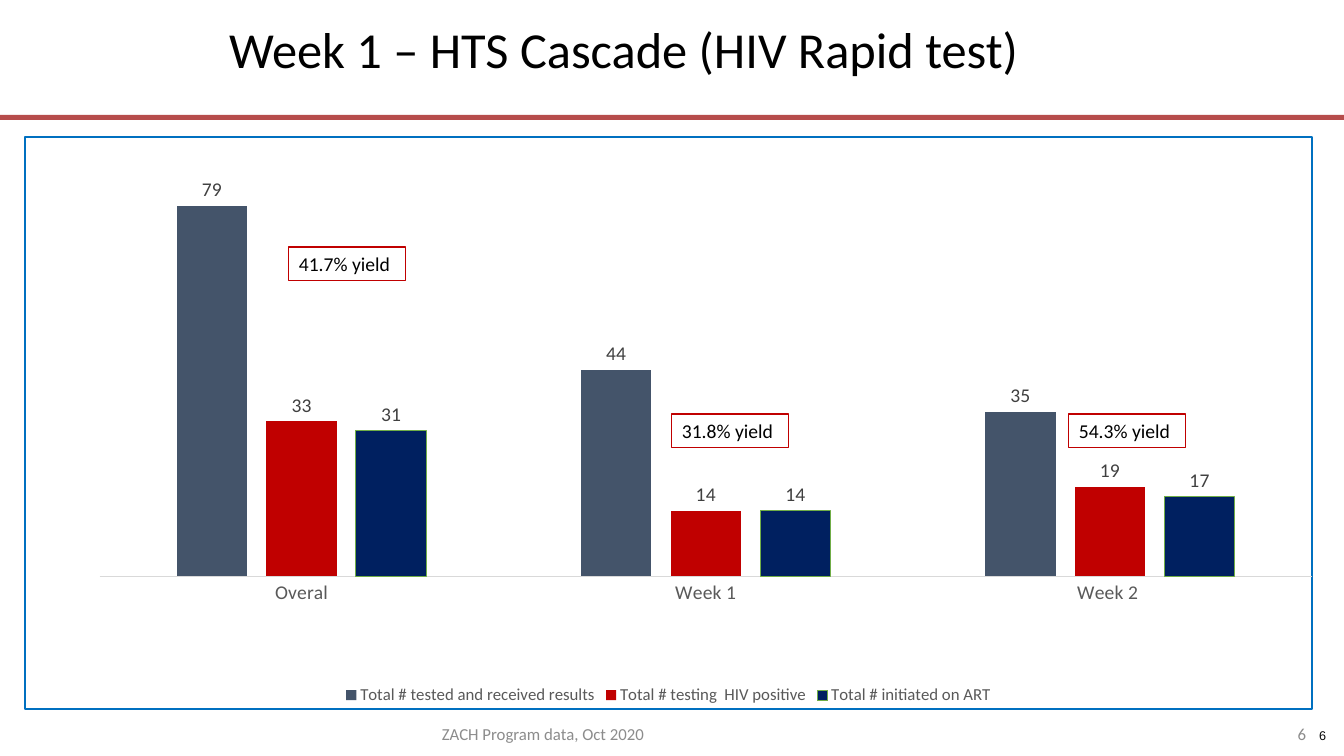
from lxml import etree
from pptx import Presentation
from pptx.chart.data import CategoryChartData
from pptx.dml.color import RGBColor
from pptx.enum.chart import XL_CHART_TYPE, XL_LABEL_POSITION, XL_LEGEND_POSITION, XL_TICK_MARK
from pptx.enum.shapes import MSO_SHAPE
from pptx.enum.text import MSO_ANCHOR, PP_ALIGN
from pptx.oxml import parse_xml
from pptx.oxml.ns import nsdecls, qn
from pptx.util import Pt

COLUMNS = XL_CHART_TYPE.COLUMN_CLUSTERED
OUTSIDE = XL_LABEL_POSITION.OUTSIDE_END
BOTTOM = XL_LEGEND_POSITION.BOTTOM
NO_TICK = XL_TICK_MARK.NONE
RECT = MSO_SHAPE.RECTANGLE
TOP, MIDDLE = MSO_ANCHOR.TOP, MSO_ANCHOR.MIDDLE
LEFT, RIGHT = PP_ALIGN.LEFT, PP_ALIGN.RIGHT

BLACK = RGBColor(0x00, 0x00, 0x00)
INK = RGBColor(0x06, 0x06, 0x06)
GRAY = RGBColor(0x8C, 0x8C, 0x8C)
LABEL = RGBColor(0x40, 0x40, 0x40)
AXIS = RGBColor(0x59, 0x59, 0x59)
RULE = RGBColor(0xD9, 0xD9, 0xD9)
BRICK = RGBColor(0xB6, 0x4C, 0x4B)
SLATE = RGBColor(0x44, 0x54, 0x6A)
RED = RGBColor(0xC0, 0x00, 0x00)
NAVY = RGBColor(0x00, 0x20, 0x60)
GREEN = RGBColor(0x70, 0xAD, 0x47)
BLUE = RGBColor(0x00, 0x70, 0xC0)

WEEKS = ["Overal", "Week 1", "Week 2 "]
SERIES = [
    ("Total # tested and received results", [79, 44, 35], SLATE, None),
    ("Total # testing  HIV positive", [33, 14, 19], RED, None),
    ("Total # initiated on ART", [31, 14, 17], NAVY, GREEN),
]
YIELDS = [(289, 247, "41.7% yield"), (672, 414, "31.8% yield"), (1069, 414, "54.3% yield")]
PLOT = {"x": 0.058, "y": 0.03, "w": 0.942, "h": 0.738}


def px(*lengths):
    return [round(n * 914400 / 100.8) for n in lengths]


def style(font, size, color, name="Calibri"):
    font.name, font.size, font.color.rgb = name, Pt(size), color


class Page:
    """The current slide and its house style."""

    def __init__(self, deck):
        self.slide = deck.slides.add_slide(deck.slide_layouts[5])
        self.shapes = self.slide.shapes

    def label(self, shape, text, size, color, name="Calibri", align=LEFT, anchor=MIDDLE):
        frame = shape.text_frame
        frame.word_wrap = True
        frame.vertical_anchor = anchor
        frame.text = text
        para = frame.paragraphs[0]
        para.alignment = align
        style(para.font, size, color, name)
        return para

    def title(self, box, text):
        shape = self.shapes.title
        shape.left, shape.top, shape.width, shape.height = px(*box)
        self.label(shape, text, 36, BLACK, anchor=TOP).line_spacing = 0.9

    def text(self, box, text, size, color, **look):
        self.label(self.shapes.add_textbox(*px(*box)), text, size, color, **look)

    def rect(self, box, fill=None, line=None):
        shape = self.shapes.add_shape(RECT, *px(*box))
        shape.shadow.inherit = False
        if fill:
            shape.fill.solid()
            shape.fill.fore_color.rgb = fill
        else:
            shape.fill.background()
        if line:
            shape.line.color.rgb = line
            shape.line.width = Pt(0.75)
        else:
            shape.line.fill.background()
        return shape

    def tag(self, left, top, text):
        shape = self.rect((left, top, 117, 34), line=RED)
        self.label(shape, text, 14, BLACK, anchor=TOP)

    def chart(self, box):
        data = CategoryChartData()
        data.categories = WEEKS
        for name, values, *_ in SERIES:
            data.add_series(name, values)
        chart = self.shapes.add_chart(COLUMNS, *px(*box), data).chart
        style(chart.font, 14, BLACK)
        chart.has_title = False
        chart.has_legend = True
        chart.legend.position = BOTTOM
        chart.legend.include_in_layout = False
        style(chart.legend.font, 12, AXIS)

        axis = chart.category_axis
        axis.major_tick_mark = axis.minor_tick_mark = NO_TICK
        axis.format.line.color.rgb = RULE
        axis.format.line.width = Pt(0.75)
        style(axis.tick_labels.font, 14, AXIS)
        scale = chart.value_axis
        scale.minimum_scale, scale.maximum_scale = 0, 90
        scale.has_major_gridlines = False
        scale.visible = False

        plot = chart.plots[0]
        plot.gap_width, plot.overlap = 219, -27
        plot.vary_by_categories = False
        for bars, (_, _, fill, line) in zip(plot.series, SERIES):
            bars.format.fill.solid()
            bars.format.fill.fore_color.rgb = fill
            if line:
                bars.format.line.color.rgb = line
                bars.format.line.width = Pt(0.75)
            else:
                bars.format.line.fill.background()
            labels = bars.data_labels
            labels.show_value = True
            labels.position = OUTSIDE
            style(labels.font, 14, LABEL)
        self.frame(chart)

    def frame(self, chart):
        """Fix the inner plot area and outline the whole chart."""
        root = chart.element
        area = root.find(".//" + qn("c:plotArea"))
        old = area.find(qn("c:layout"))
        if old is not None:
            area.remove(old)
        layout = parse_xml(f"<c:layout {nsdecls('c')}><c:manualLayout/></c:layout>")
        modes = {"layoutTarget": "inner", "xMode": "edge", "yMode": "edge"}
        for key, value in {**modes, **PLOT}.items():
            etree.SubElement(layout[0], qn("c:" + key)).set("val", str(value))
        area.insert(0, layout)
        root.find(qn("c:chart")).addnext(parse_xml(
            f"<c:spPr {nsdecls('c', 'a')}><a:noFill/><a:ln w=\"{Pt(1.25)}\"><a:solidFill>"
            f"<a:srgbClr val=\"{BLUE}\"/></a:solidFill></a:ln></c:spPr>"))


def main():
    deck = Presentation()
    deck.slide_width, deck.slide_height = px(1344, 756)
    page = Page(deck)
    page.rect((0, 115, 1344, 5), fill=BRICK)
    page.text((1271, 716, 65, 40), "6", 9, INK, name="Arial", align=RIGHT)
    page.title((219, 20, 1094, 70), "Week 1 – HTS Cascade (HIV Rapid test)")
    page.text((1200, 714, 116, 40), "6", 12, GRAY, align=RIGHT)
    page.text((432, 714, 480, 40), "ZACH Program data, Oct 2020", 12, GRAY)
    page.chart((24, 136, 1289, 574))
    for left, top, text in YIELDS:
        page.tag(left, top, text)
    deck.save("out.pptx")


if __name__ == "__main__":
    main()
